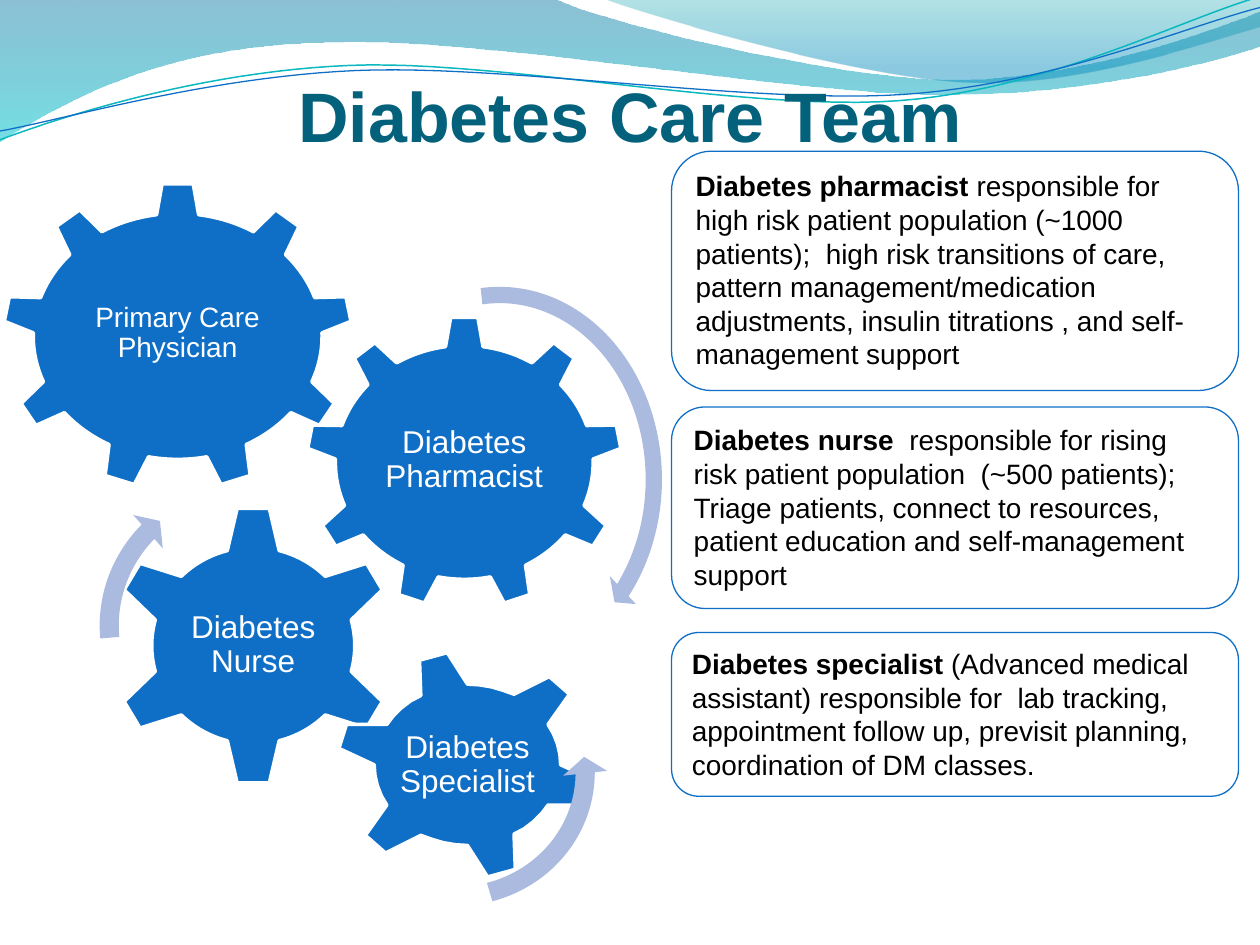
from math import hypot

from lxml import etree
from pptx import Presentation
from pptx.dml.color import RGBColor
from pptx.enum.shapes import MSO_SHAPE
from pptx.enum.text import MSO_ANCHOR, PP_ALIGN
from pptx.oxml.ns import qn
from pptx.util import Inches, Pt

BLUE = RGBColor(0x0F, 0x6F, 0xC6)
TEAL = RGBColor(0x0A, 0xB8, 0xBF)
TITLE = RGBColor(0x04, 0x61, 0x7B)
ARROW = RGBColor(0xAB, 0xBB, 0xDF)
WAVE_DARK = RGBColor(0x00, 0x74, 0xA1)
WAVE_AQUA = RGBColor(0x00, 0xC6, 0xCF)
WAVE_GREEN = RGBColor(0x00, 0xA1, 0xA9)
WAVE_SKY = RGBColor(0x00, 0x8B, 0xBF)
WHITE = RGBColor(0xFF, 0xFF, 0xFF)
BLACK = RGBColor(0, 0, 0)

CENTER, LEFT = PP_ALIGN.CENTER, PP_ALIGN.LEFT
TOP, MIDDLE, BOTTOM = MSO_ANCHOR.TOP, MSO_ANCHOR.MIDDLE, MSO_ANCHOR.BOTTOM
GEAR_9, GEAR_6 = MSO_SHAPE.GEAR_9, MSO_SHAPE.GEAR_6
CLOCKWISE, COUNTER = MSO_SHAPE.CIRCULAR_ARROW, MSO_SHAPE.LEFT_CIRCULAR_ARROW
ROUNDED = MSO_SHAPE.ROUNDED_RECTANGLE

# Curves: a start point, then cubic segments (two controls and an end)
WAVE_BACK = [(4.4, -0.01),
             (4.76, 0.17, 6.64, 0.63, 7.58, 0.63), (8.53, 0.63, 9.58, 0.26, 10, 0.09)]
WAVE_BACK_RETURN = [(10.01, 0.36),
                    (9.83, 0.44, 8.7, 0.76, 7.46, 0.75), (6.22, 0.75, 3.82, 0.28, 2.57, 0.34),
                    (1.29, 0.35, 0.46, 0.83, -0.01, 1.13)]
WAVE_FRONT = [(4.79, -0.01),
              (5.09, 0.11, 6.82, 0.62, 7.69, 0.65), (8.56, 0.69, 9.61, 0.32, 10, 0.21)]
TEAL_LINE = [(0, 1.11),
             (0.48, 0.93, 1.58, 0.57, 2.77, 0.52), (3.95, 0.47, 5.93, 0.89, 7.13, 0.8),
             (8.33, 0.71, 9.38, 0.15, 9.98, -0.02)]
BLUE_LINE = [(0, 1.04),
             (0.47, 0.96, 1.64, 0.61, 2.83, 0.56), (4.03, 0.51, 5.97, 0.83, 7.17, 0.75),
             (8.36, 0.67, 9.41, 0.21, 10, 0.06)]

GEARS = [
    (GEAR_9, (0.02, 1.45, 2.78, 2.44), "Primary Care Physician", 16),
    (GEAR_9, (2.43, 2.51, 2.51, 2.32), "Diabetes Pharmacist", 18),
    (GEAR_6, (0.87, 4.01, 2.28, 2.23), "Diabetes Nurse", 18),
]

# Tilted gear: centre, body radii and half its teeth, relative to the centre
HUB, RADII = (3.71, 6.07), (0.74, 0.64)
TEETH = [
    [(0.37, -0.56), (0.65, -0.7), (0.81, -0.56), (0.64, -0.32)],
    [(0.74, 0), (1.02, 0.13), (0.96, 0.32), (0.64, 0.32)],
    [(0.37, 0.55), (0.38, 0.83), (0.16, 0.89), (0, 0.64)],
]

ARROWS = [
    (CLOCKWISE, (2.59, 2.19, 2.75, 3.23), 0, (0.047, 2.99, 25.162, 158.613, 0.055)),
    (COUNTER, (2.38, 4.95, 2.44, 2.34), 186.1, (0.065, 4.3, 104.891, 148.378, 0.075)),
    (CLOCKWISE, (0.69, 3.7, 2.63, 2.53), 0, (0.06, 3.941, 133.138, 105.082, 0.07)),
]

ROLES = [
    (1.2, 1.9, "Diabetes pharmacist ",
     "responsible for high risk patient population (~1000 patients);  high risk transitions "
     "of care, pattern management/medication adjustments, insulin titrations , and "
     "self-management support"),
    (3.23, 1.6, "Diabetes nurse  ",
     "responsible for rising risk patient population  (~500 patients);  Triage patients, "
     "connect to resources, patient education and self-management support"),
    (5.02, 1.3, "Diabetes specialist ",
     "(Advanced medical assistant) responsible for  lab tracking, appointment follow up, "
     "previsit planning, coordination of DM classes."),
]


def curve_points(curve, steps=24):
    points = [curve[0]]
    for x1, y1, x2, y2, x3, y3 in curve[1:]:
        x0, y0 = points[-1]
        for i in range(1, steps + 1):
            t = i / steps
            a, b, c, d = (1 - t) ** 3, 3 * t * (1 - t) ** 2, 3 * t * t * (1 - t), t ** 3
            points.append((a * x0 + b * x1 + c * x2 + d * x3,
                           a * y0 + b * y1 + c * y2 + d * y3))
    return points


def gear_points():
    """Mirror the teeth through the hub and join them along the oval body."""
    teeth = TEETH + [[(-x, -y) for x, y in tooth] for tooth in TEETH]
    points = []
    for tooth, following in zip(teeth, teeth[1:] + teeth[:1]):
        points += tooth
        (xa, ya), (xb, yb) = tooth[-1], following[0]
        for t in (0.25, 0.5, 0.75):
            x, y = xa + (xb - xa) * t, ya + (yb - ya) * t
            k = hypot(x / RADII[0], y / RADII[1])
            points.append((x / k, y / k))
    return [(HUB[0] + x, HUB[1] + y) for x, y in points]


def add_outline(slide, points, close=True):
    start, *rest = [(Inches(x), Inches(y)) for x, y in points]
    builder = slide.shapes.build_freeform(*start)
    builder.add_line_segments(rest, close=close)
    sp = builder.convert_to_shape()
    sp.shadow.inherit = False
    return sp


def add_preset(slide, kind, box, adjustments=()):
    sp = slide.shapes.add_shape(kind, *map(Inches, box))
    sp.shadow.inherit = False
    for i, value in enumerate(adjustments):
        sp.adjustments[i] = value
    return sp


def style(sp, fill=None, line=None, width=0.75):
    if fill is None:
        sp.fill.background()
    else:
        sp.fill.solid()
        sp.fill.fore_color.rgb = fill
    if line is None:
        sp.line.fill.background()
    else:
        sp.line.color.rgb = line
        sp.line.width = Pt(width)


def add_wave(slide, points, colors, alphas, end=1):
    sp = add_outline(slide, points)
    sp.line.fill.background()
    sp.fill.gradient()
    sp.fill.gradient_angle = 270
    for stop, color, position in zip(sp.fill.gradient_stops, colors, (0, end)):
        stop.color.rgb = color
        stop.position = position
    for clr, alpha in zip(sp._element.iter(qn("a:srgbClr")), alphas):
        etree.SubElement(clr, qn("a:alpha")).set("val", str(alpha * 1000))


def set_text(sp, runs, size, color, align=CENTER, anchor=MIDDLE, insets=None):
    tf = sp.text_frame
    tf.word_wrap = True
    tf.vertical_anchor = anchor
    if insets:
        (tf.margin_left, tf.margin_top,
         tf.margin_right, tf.margin_bottom) = map(Inches, insets)
    p = tf.paragraphs[0]
    p.alignment = align
    p.font.name, p.font.size, p.font.color.rgb = "Arial", Pt(size), color
    for text, bold in runs:
        r = p.add_run()
        r.text = text
        r.font.bold = bold
    return p


def label_gear(sp, text, size, insets):
    style(sp, BLUE, WHITE, 2)
    set_text(sp, [(text, False)], size, WHITE, insets=insets).line_spacing = 0.9


def add_role(slide, top, height, name, duties):
    sp = add_preset(slide, ROUNDED, (5.33, top, 4.5, height))
    style(sp, line=BLUE)
    set_text(sp, [(name, True), (duties, False)], 16, BLACK, LEFT, TOP)


def main():
    prs = Presentation()
    prs.slide_width, prs.slide_height = Inches(10), Inches(7.5)
    slide = prs.slides.add_slide(prs.slide_layouts[6])

    # Waves across the top
    back = [(0, -0.01)] + curve_points(WAVE_BACK) + curve_points(WAVE_BACK_RETURN)
    add_wave(slide, back, (WAVE_DARK, WAVE_AQUA), (45, 55))
    add_wave(slide, curve_points(WAVE_FRONT) + [(10, 0)],
             (WAVE_GREEN, WAVE_SKY), (30, 45), end=0.8)
    for curve, color, width in ((TEAL_LINE, TEAL, 0.85), (BLUE_LINE, BLUE, 0.75)):
        style(add_outline(slide, curve_points(curve), close=False), line=color, width=width)

    # Title
    title = slide.shapes.add_textbox(*map(Inches, (0.5, 0.58, 9, 0.66)))
    set_text(title, [("Diabetes Care Team", True)], 40, TITLE,
             anchor=BOTTOM, insets=(0, 0.05, 0, 0))

    # Gears
    for kind, box, text, size in GEARS:
        label_gear(add_preset(slide, kind, box), text, size, (0.02,) * 4)
    label_gear(add_outline(slide, gear_points()), "Diabetes Specialist", 18,
               (0.35, 0.3, 0.35, 0.3))

    # Arrows around the gears
    for kind, box, rotation, adjustments in ARROWS:
        sp = add_preset(slide, kind, box, adjustments)
        sp.rotation = rotation
        style(sp, ARROW)

    # Role descriptions
    for role in ROLES:
        add_role(slide, *role)

    prs.save("out.pptx")


if __name__ == "__main__":
    main()
